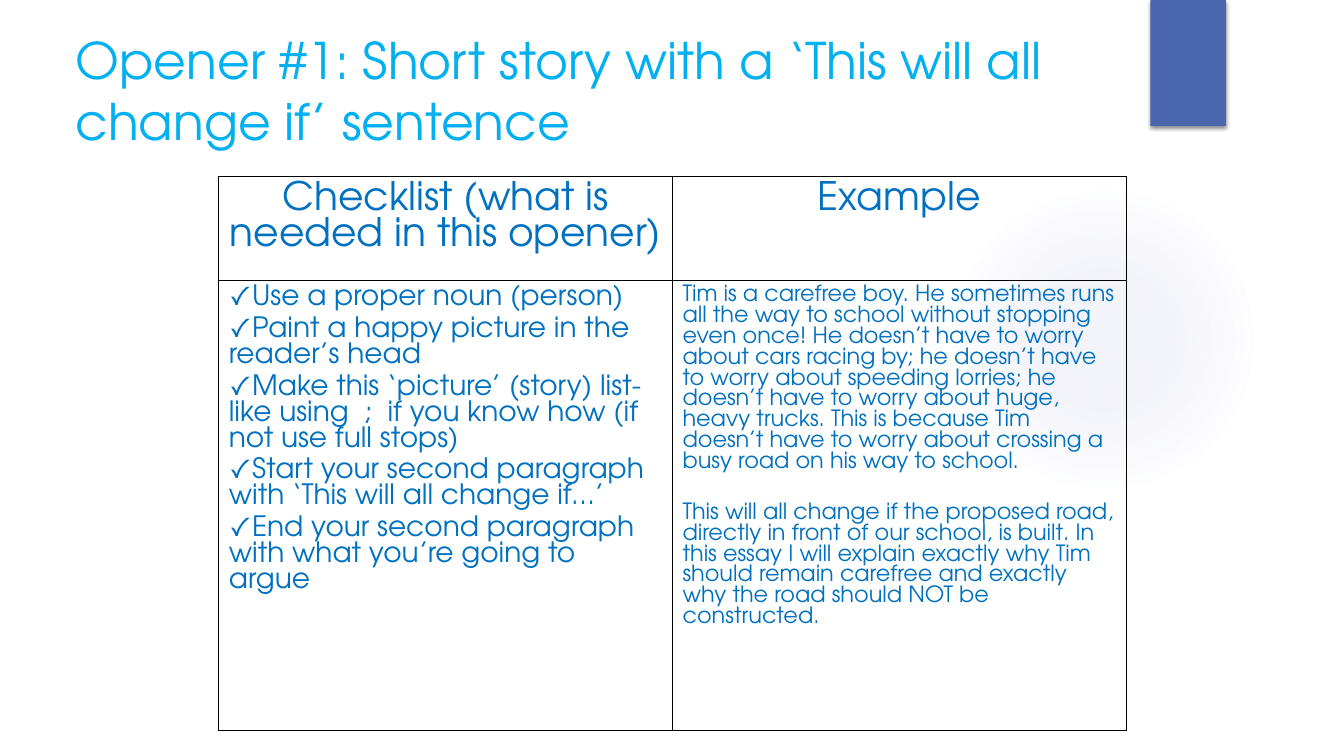
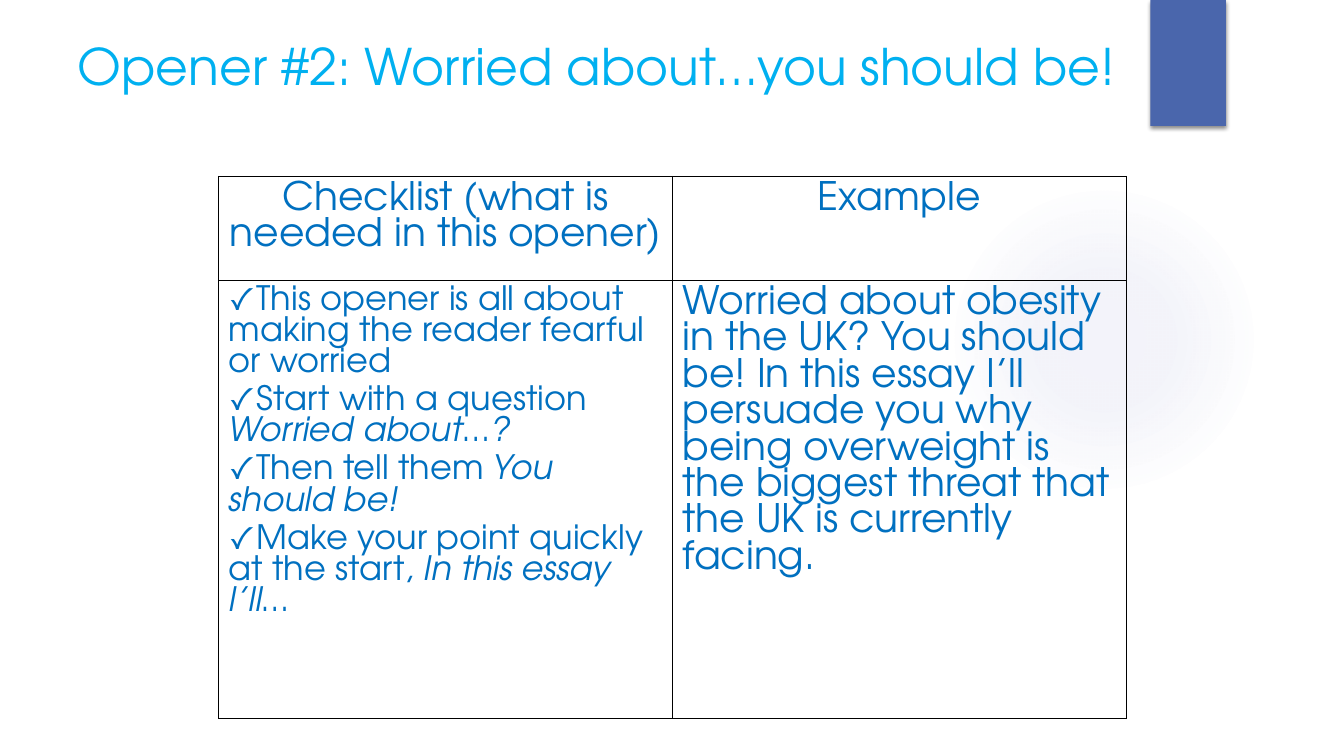
import pptx
import pptx.dml.color
import pptx.enum.shapes
import pptx.enum.text
import pptx.oxml
import pptx.oxml.ns
import pptx.util

Inches = pptx.util.Inches
Pt = pptx.util.Pt

COLORS = {
    "title": "00B0F0",
    "text": "0070C0",
    "tab": "4A66AC",
    "glow": "5C64B7",
    "black": "000000",
}
FONT = "TeX Gyre Adventor"
TITLE_SIZE = 36
HEADER_SIZE = 28
HEADERS = ["Checklist (what is needed in this opener)", "Example"]
LINE_SPACING = 1.0

OPENERS = [
    {
        "title": "Opener #1: Short story with a ‘This will all change if’ sentence",
        "title_box": (0.65, 0.24, 10.23, 1.25),
        "body_height": 4.47,
        "checklist_size": 20,
        "checklist": [
            [("Use a proper noun (person)", False)],
            [("Paint a happy picture in the reader’s head", False)],
            [("Make this ‘picture’ (story) list-like using  ;  if you know how "
              "(if not use full stops)", False)],
            [("Start your second paragraph with ‘This will all change if…’", False)],
            [("End your second paragraph with what you’re going to argue", False)],
        ],
        "example_size": 16,
        "example": [
            [("Tim is a carefree boy. He sometimes runs all the way to school without "
              "stopping even once! He doesn’t have to worry about cars racing by; he "
              "doesn’t have to worry about speeding lorries; he doesn’t have to worry "
              "about huge, heavy trucks. This is because Tim doesn’t have to worry about "
              "crossing a busy road on his way to school.", False)],
            [("This will all change if the proposed road, directly in front of our "
              "school, is built. In this essay I will explain exactly why Tim should "
              "remain carefree and exactly why the road should NOT be constructed.", False)],
        ],
    },
    {
        "title": "Opener #2: Worried about…you should be!",
        "title_box": (0.67, 0.3, 12, 1.25),
        "body_height": 4.35,
        "checklist_size": 24,
        "checklist": [
            [("This opener is all about making the reader fearful or worried", False)],
            [("Start with a question ", False), ("Worried about…?", True)],
            [("Then tell them ", False), ("You should be!", True)],
            [("Make your point quickly at the start, ", False),
             ("In this essay I’ll…", True)],
        ],
        "example_size": 28,
        "example": [
            [("Worried about obesity in the UK? You should be! In this essay I’ll "
              "persuade you why being overweight is the biggest threat that the UK is "
              "currently facing.", False)],
        ],
    },
]


def color(name):
    return pptx.dml.color.RGBColor.from_string(COLORS[name])


def drawing_xml(tag, content):
    namespace = pptx.oxml.ns.nsdecls("a")
    name = tag.split()[0]
    return pptx.oxml.parse_xml(f"<a:{tag} {namespace}>{content}</a:{name}>")


def add_run(paragraph, text, size, color_name, italic=False):
    run = paragraph.add_run()
    run.text = text
    run.font.name = FONT
    run.font.size = Pt(size)
    run.font.italic = italic
    run.font.color.rgb = color(color_name)


def add_plain_shape(slide, kind, box):
    shape = slide.shapes.add_shape(kind, *map(Inches, box))
    shape.shadow.inherit = False
    shape.line.fill.background()
    return shape


def decorate_layout(layout, slide):
    kinds = pptx.enum.shapes.MSO_SHAPE
    glow = add_plain_shape(slide, kinds.OVAL, (9.41, 1.83, 3.08, 3.08))
    glow.fill.background()
    stops = "".join(
        f'<a:gs pos="{position * 1000}"><a:srgbClr val="{COLORS["glow"]}">'
        f'<a:alpha val="{alpha * 1000}"/></a:srgbClr></a:gs>'
        for position, alpha in [(0, 7), (36, 6), (69, 0), (100, 0)]
    )
    gradient = drawing_xml(
        'gradFill rotWithShape="1"',
        f'<a:gsLst>{stops}</a:gsLst><a:path path="circle">'
        '<a:fillToRect l="50000" t="50000" r="50000" b="50000"/></a:path>',
    )
    properties = glow.element.spPr
    properties.replace(properties.find(pptx.oxml.ns.qn("a:noFill")), gradient)

    tab = add_plain_shape(slide, kinds.RECTANGLE, (11.41, 0, 0.75, 1.25))
    tab.fill.solid()
    tab.fill.fore_color.rgb = color("tab")
    effects = tab.element.spPr.find(pptx.oxml.ns.qn("a:effectLst"))
    effects.append(drawing_xml(
        f'outerShdw blurRad="{Pt(3)}" dist="{Pt(2)}" dir="5400000" rotWithShape="0"',
        f'<a:srgbClr val="{COLORS["black"]}"><a:alpha val="45000"/></a:srgbClr>',
    ))
    for position, shape in enumerate([glow, tab], start=2):
        layout.element.cSld.spTree.insert(position, shape.element)


def place_title(slide, text, box):
    title = slide.shapes.title
    title.left, title.top, title.width, title.height = map(Inches, box)
    frame = title.text_frame
    frame.word_wrap = True
    frame.auto_size = pptx.enum.text.MSO_AUTO_SIZE.NONE
    frame.vertical_anchor = pptx.enum.text.MSO_ANCHOR.TOP
    paragraph = frame.paragraphs[0]
    paragraph.alignment = pptx.enum.text.PP_ALIGN.LEFT
    paragraph.line_spacing = LINE_SPACING
    add_run(paragraph, text, TITLE_SIZE, "title")


def style_cell(cell):
    cell.fill.background()
    properties = cell._tc.get_or_add_tcPr()
    for position, side in enumerate(["lnL", "lnR", "lnT", "lnB"]):
        properties.insert(position, drawing_xml(
            f'{side} w="{Pt(1)}"',
            f'<a:solidFill><a:srgbClr val="{COLORS["black"]}"/></a:solidFill>',
        ))


def fill_cell(cell, paragraphs, size, gap, bullet=None, centered=False):
    style_cell(cell)
    alignments = pptx.enum.text.PP_ALIGN
    frame = cell.text_frame
    for index, runs in enumerate(paragraphs):
        paragraph = frame.add_paragraph() if index else frame.paragraphs[0]
        paragraph.alignment = alignments.CENTER if centered else alignments.LEFT
        if bullet:
            properties = paragraph._p.get_or_add_pPr()
            properties.append(drawing_xml(f'buFont typeface="{FONT}"', ""))
            properties.append(drawing_xml(f'buChar char="{bullet}"', ""))
        paragraph.line_spacing = LINE_SPACING
        if index:
            paragraph.space_before = Pt(gap)
        for text, italic in runs:
            add_run(paragraph, text, size, "text", italic)


def add_opener_table(slide, opener, left, top, width):
    heights = [1.03, opener["body_height"]]
    frame = slide.shapes.add_table(
        2, 2, *map(Inches, (left, top, width, sum(heights)))
    )
    table = frame.table
    table.first_row = False
    table.horz_banding = False
    for row, height in zip(table.rows, heights):
        row.height = Inches(height)
    for column, header in enumerate(HEADERS):
        fill_cell(table.cell(0, column), [[(header, False)]], HEADER_SIZE, 0,
                  centered=True)
    size = opener["checklist_size"]
    fill_cell(table.cell(1, 0), opener["checklist"], size, size * 0.2, bullet="✓")
    size = opener["example_size"]
    fill_cell(table.cell(1, 1), opener["example"], size, size * 1.35)


def main():
    presentation = pptx.Presentation()
    presentation.slide_width = Inches(13.33)
    presentation.slide_height = Inches(7.5)
    layout = presentation.slide_layouts[5]
    for index, opener in enumerate(OPENERS):
        slide = presentation.slides.add_slide(layout)
        if index == 0:
            decorate_layout(layout, slide)
        place_title(slide, opener["title"], opener["title_box"])
        add_opener_table(slide, opener, 2.17, 1.75, 9)
    presentation.save("out.pptx")


if __name__ == "__main__":
    main()
